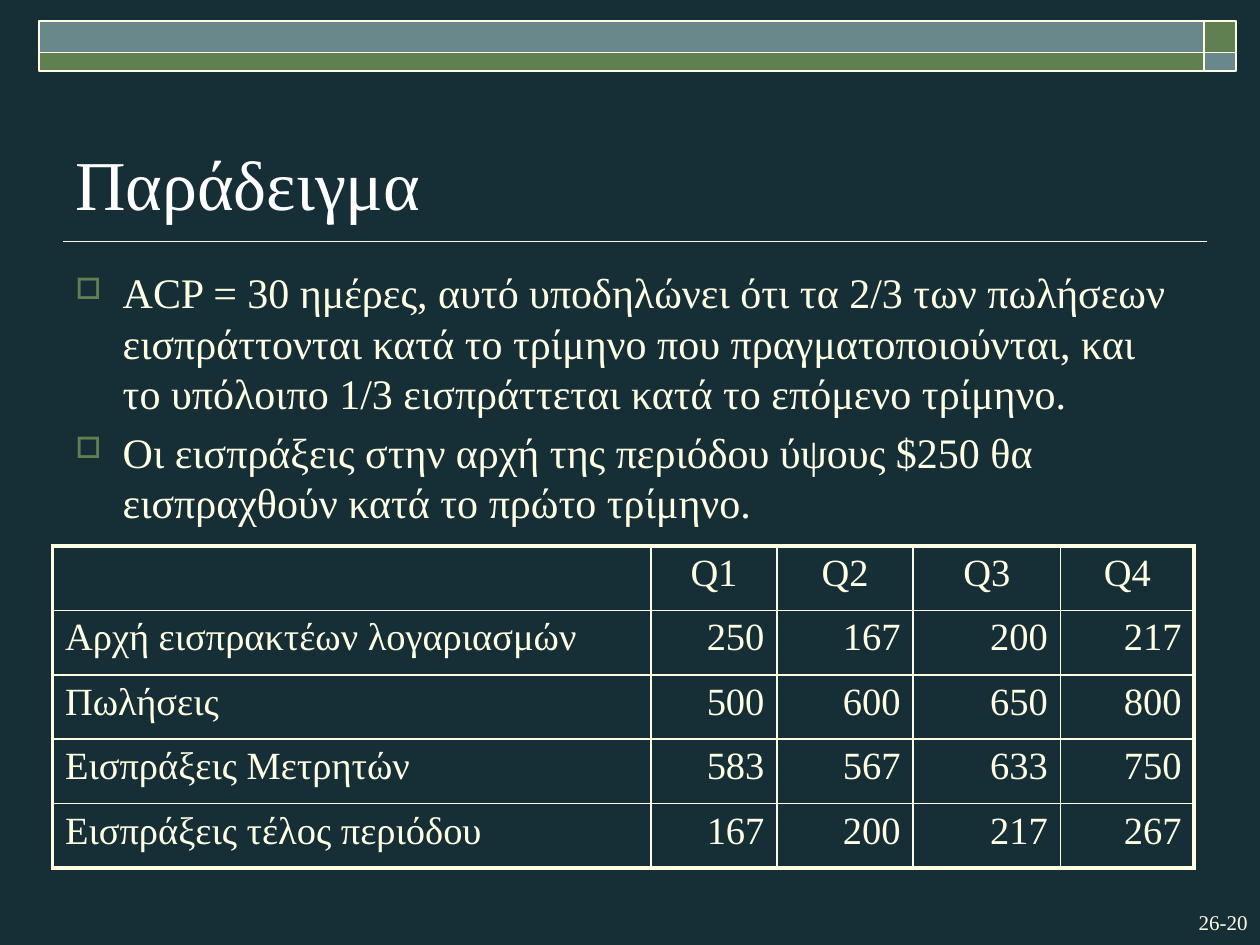
from lxml.etree import SubElement
from pptx import Presentation
from pptx.dml.color import RGBColor
from pptx.enum.shapes import MSO_CONNECTOR as Connector, MSO_SHAPE as Shape
from pptx.enum.text import MSO_ANCHOR as Anchor, PP_ALIGN as Align
from pptx.oxml.ns import qn
from pptx.util import Pt

FONT = "Times New Roman"
NIGHT, CREAM, WHITE = "162E36", "FFFFE3", "FFFFFF"
GREEN, TEAL = "618052", "69888B"

POINTS = [
    "ACP = 30 ημέρες, αυτό υποδηλώνει ότι τα 2/3 των πωλήσεων εισπράττονται κατά το "
    "τρίμηνο που πραγματοποιούνται, και το υπόλοιπο 1/3 εισπράττεται κατά το επόμενο τρίμηνο.",
    "Οι εισπράξεις στην αρχή της περιόδου ύψους $250 θα εισπραχθούν κατά το πρώτο τρίμηνο.",
]
CASH_ROWS = [
    ["", "Q1", "Q2", "Q3", "Q4"],
    ["Αρχή εισπρακτέων λογαριασμών", "250", "167", "200", "217"],
    ["Πωλήσεις", "500", "600", "650", "800"],
    ["Εισπράξεις Μετρητών", "583", "567", "633", "750"],
    ["Εισπράξεις τέλος περιόδου", "167", "200", "217", "267"],
]
COLUMN_WIDTHS = [342, 72, 77.8, 84.2, 76.4]
ROW_HEIGHT = 36.8


def color(code):
    return RGBColor.from_string(code)


def add_span(para, text, size, code):
    span = para.add_run()
    span.text = text
    span.font.name = FONT
    span.font.size = Pt(size)
    span.font.color.rgb = color(code)


def add_box(page, left, top, width, height, anchor=Anchor.TOP):
    box = page.shapes.add_textbox(Pt(left), Pt(top), Pt(width), Pt(height))
    frame = box.text_frame
    frame.word_wrap = True
    frame.vertical_anchor = anchor
    return frame


def add_band(page, left, top, width, height, fill):
    band = page.shapes.add_shape(Shape.RECTANGLE, Pt(left), Pt(top), Pt(width), Pt(height))
    band.shadow.inherit = False
    band.fill.solid()
    band.fill.fore_color.rgb = color(fill)
    band.line.color.rgb = color(CREAM)
    band.line.width = Pt(1)


def add_header_bands(page):
    left, middle, right = 22.2, 688.2, 706.2
    for top, height, wide_fill, end_fill in [(12, 18, TEAL, GREEN), (30, 10.8, GREEN, TEAL)]:
        add_band(page, left, top, middle - left, height, wide_fill)
        add_band(page, middle, top, right - middle, height, end_fill)


def add_rule(page, left, right, y):
    rule = page.shapes.add_connector(Connector.STRAIGHT, Pt(right), Pt(y), Pt(left), Pt(y))
    rule.line.color.rgb = color(CREAM)
    rule.line.width = Pt(1)
    SubElement(rule._element.spPr, qn("a:effectLst"))


def add_bullet(para):
    properties = para._p.get_or_add_pPr()
    properties.set("marL", str(Pt(27)))
    properties.set("indent", str(-Pt(27)))
    bullet_color = SubElement(properties, qn("a:buClr"))
    SubElement(bullet_color, qn("a:srgbClr"), val=GREEN)
    SubElement(properties, qn("a:buSzPct"), val="70000")
    SubElement(properties, qn("a:buChar"), char="□")


def add_points(page):
    frame = add_box(page, 36, 149, 646.6, 146)
    for index, text in enumerate(POINTS):
        para = frame.add_paragraph() if index else frame.paragraphs[0]
        add_bullet(para)
        para.space_before = Pt(4.8 if index else 0)
        add_span(para, text, 24, CREAM)


def add_border(cell, side, width):
    edge = SubElement(cell._tc.get_or_add_tcPr(), qn(f"a:ln{side}"), w=str(Pt(width)))
    fill = SubElement(edge, qn("a:solidFill"))
    SubElement(fill, qn("a:srgbClr"), val=CREAM)


def add_cash_table(page):
    row_count, column_count = len(CASH_ROWS), len(COLUMN_WIDTHS)
    table = page.shapes.add_table(
        row_count, column_count, Pt(30), Pt(312),
        Pt(sum(COLUMN_WIDTHS)), Pt(ROW_HEIGHT * row_count),
    ).table
    for column, width in zip(table.columns, COLUMN_WIDTHS):
        column.width = Pt(width)
    for r, values in enumerate(CASH_ROWS):
        table.rows[r].height = Pt(ROW_HEIGHT)
        for c, value in enumerate(values):
            cell = table.cell(r, c)
            outer = {"L": c == 0, "R": c == column_count - 1,
                     "T": r == 0, "B": r == row_count - 1}
            for side, is_outer in outer.items():
                add_border(cell, side, 2.25 if is_outer else 1)
            cell.fill.background()
            para = cell.text_frame.paragraphs[0]
            if c:
                para.alignment = Align.RIGHT if r else Align.CENTER
            if value:
                add_span(para, value, 22, CREAM)


def main():
    deck = Presentation()
    deck.slide_width, deck.slide_height = Pt(720), Pt(540)
    page = deck.slides.add_slide(deck.slide_layouts[6])
    page.background.fill.solid()
    page.background.fill.fore_color.rgb = color(NIGHT)

    add_rule(page, 36, 690, 138)
    add_header_bands(page)
    number = add_box(page, 660, 516, 60, 21.6).paragraphs[0]
    number.alignment = Align.RIGHT
    add_span(number, "26-20", 12, CREAM)
    title = add_box(page, 36, 42, 648, 90, Anchor.BOTTOM).paragraphs[0]
    add_span(title, "Παράδειγμα", 40, WHITE)
    add_points(page)
    add_cash_table(page)
    deck.save("out.pptx")


if __name__ == "__main__":
    main()
